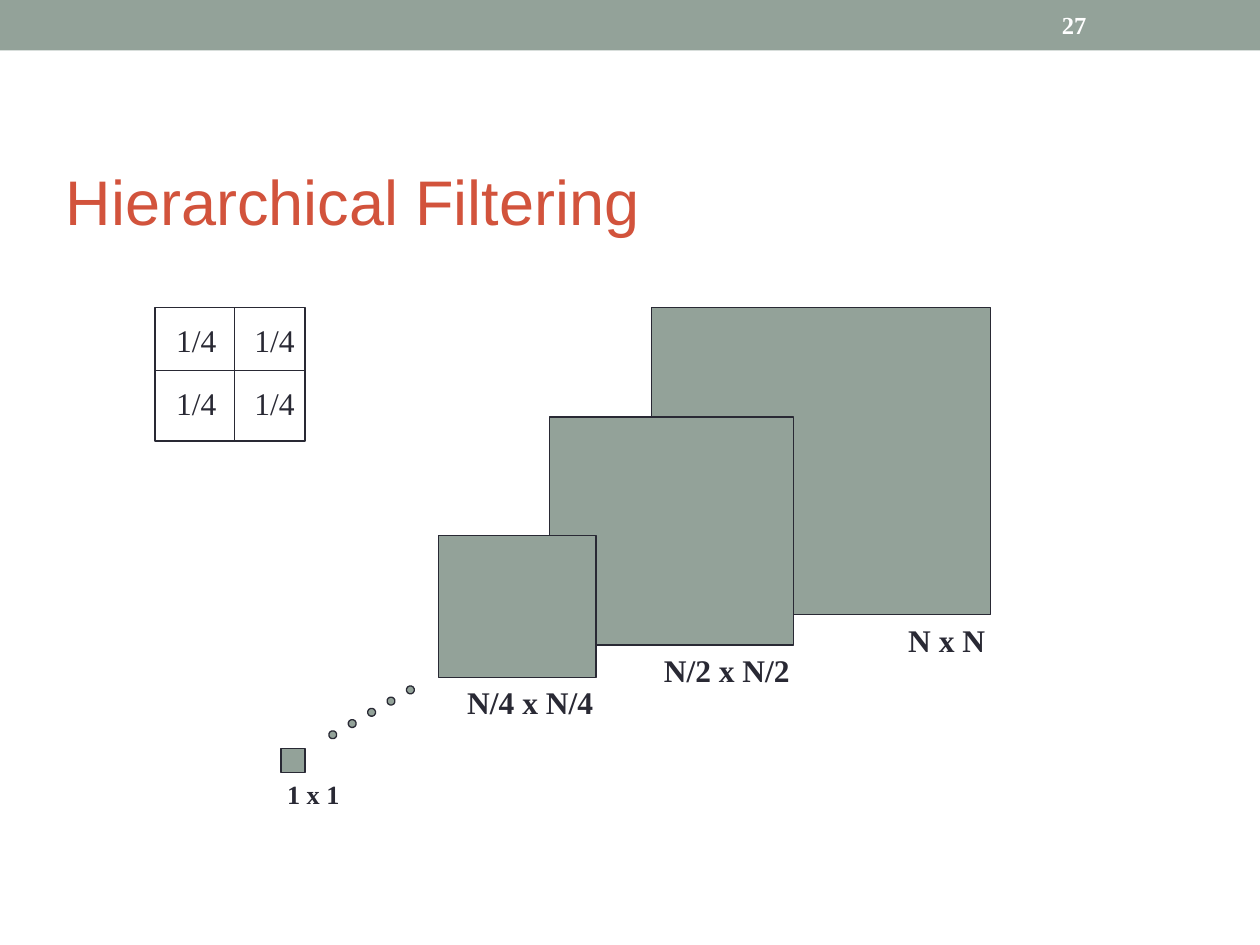
from itertools import product

from lxml.etree import SubElement
from pptx import Presentation
from pptx.dml.color import RGBColor
from pptx.enum.shapes import MSO_CONNECTOR, MSO_SHAPE
from pptx.enum.text import MSO_ANCHOR, PP_ALIGN
from pptx.oxml.ns import qn
from pptx.util import Inches, Pt

COLUMNS, ROWS = 100, 75
SAGE, INK, RUST, WHITE = "93A299", "292934", "D2533C", "FFFFFF"


def color(hex_value):
    return RGBColor.from_string(hex_value)


def write(frame, text, size=18, font="Times New Roman", ink=INK, bold=False,
          anchor=MSO_ANCHOR.TOP, wrap=False):
    frame.word_wrap = wrap
    frame.vertical_anchor = anchor
    paragraph = frame.paragraphs[0]
    paragraph.alignment = PP_ALIGN.LEFT
    run = paragraph.add_run()
    run.text = text
    run.font.size = Pt(size)
    run.font.name = font
    run.font.bold = bold
    run.font.color.rgb = color(ink)


class FilterSlide:
    def __init__(self, deck):
        self.slide = deck.slides.add_slide(deck.slide_layouts[5])
        self.column = deck.slide_width / COLUMNS
        self.row = deck.slide_height / ROWS

    def place(self, x, y, width, height):
        return (round(x * self.column), round(y * self.row),
                round(width * self.column), round(height * self.row))

    def title(self, text, *box):
        heading = self.slide.shapes.title
        heading.left, heading.top, heading.width, heading.height = self.place(*box)
        write(heading.text_frame, text, size=36, font="Arial", ink=RUST,
              anchor=MSO_ANCHOR.MIDDLE, wrap=True)

    def label(self, text, *box, **style):
        caption = self.slide.shapes.add_textbox(*self.place(*box))
        write(caption.text_frame, text, **style)

    def shape(self, *box, kind=MSO_SHAPE.RECTANGLE, fill=SAGE, line=INK, group=None):
        figure = (group or self.slide).shapes.add_shape(kind, *self.place(*box))
        figure.shadow.inherit = False
        if fill:
            figure.fill.solid()
            figure.fill.fore_color.rgb = color(fill)
        else:
            figure.fill.background()
        if line:
            figure.line.color.rgb = color(line)
            figure.line.width = Pt(0.75)
        else:
            figure.line.fill.background()
        return figure

    def line(self, *ends):
        rule = self.slide.shapes.add_connector(MSO_CONNECTOR.STRAIGHT, *self.place(*ends))
        rule.line.color.rgb = color(INK)
        rule.line.width = Pt(0.75)
        SubElement(rule._element.spPr, qn("a:effectLst"))

    def dots(self, count, x, y, step_x, step_y, size):
        trail = self.slide.shapes.add_group_shape()
        for i in range(count):
            dot = self.shape(x + i * step_x, y + i * step_y, size, size,
                             kind=MSO_SHAPE.OVAL, group=trail)
            dot.rotation = 285


def main():
    deck = Presentation()
    deck.slide_width, deck.slide_height = Inches(10), Inches(7.5)
    page = FilterSlide(deck)

    page.shape(0, 0, COLUMNS, 4, line=None)
    page.title("Hierarchical Filtering", 4.2, 12.4, 85.7, 7)
    page.label("27", 83.3, 0.2, 11.7, 3.6, size=14, ink=WHITE, bold=True,
               anchor=MSO_ANCHOR.MIDDLE, wrap=True)

    levels = [
        ("N x N", 51.7, 24.4, 26.9, 24.4, 71.1, 8.2, 18),
        ("N/2 x N/2", 43.6, 33.1, 19.4, 18.1, 51.7, 12.1, 18),
        ("N/4 x N/4", 34.8, 42.5, 12.5, 11.25, 36.1, 12.1, 18),
        ("1 x 1", 22.3, 59.4, 1.9, 1.9, 21.8, 6.2, 15),
    ]
    for name, x, y, width, height, label_x, label_width, size in levels:
        page.shape(x, y, width, height)
        page.label(name, label_x, y + height, label_width, 4, size=size, bold=True)

    left, top, right, bottom = 12.3, 24.4, 24.2, 35
    middle_x, middle_y = 18.6, 29.4
    page.shape(left, top, right - left, bottom - top, fill=None)
    page.line(middle_x, top, middle_x, bottom)
    page.line(left, middle_y, right, middle_y)
    for row, column in product(range(2), repeat=2):
        page.label("1/4", 13 + 6.2 * column, 25 + 5 * row, 5.2, 4)

    page.dots(5, x=26.1, y=58, step_x=1.54, step_y=-0.89, size=0.63)

    deck.save("out.pptx")


if __name__ == "__main__":
    main()
